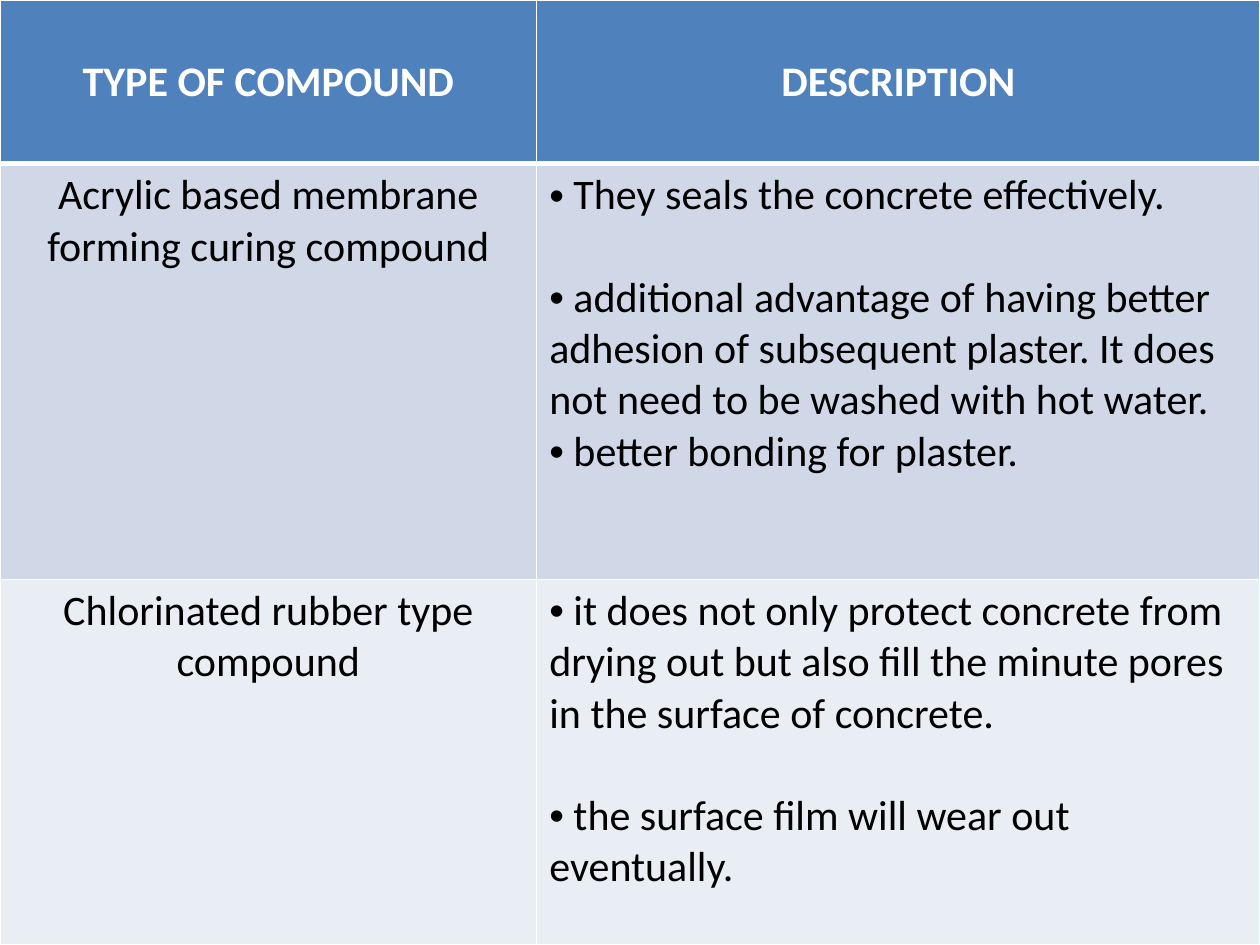
from dataclasses import dataclass

from lxml.etree import SubElement
from pptx import Presentation
from pptx.dml.color import RGBColor
from pptx.enum.text import MSO_ANCHOR, PP_ALIGN
from pptx.oxml.ns import qn
from pptx.util import Cm, Pt


@dataclass(frozen=True)
class Theme:
    font: str = "Calibri"
    size: int = 24
    gap: float = 29.3  # one text line, in points
    ink: str = "000000"
    white: str = "FFFFFF"
    head: str = "4F81BD"
    bands: tuple = ("D0D8E8", "E9EDF4")
    thin: int = 1
    thick: int = 3


THEME = Theme()
WIDTHS = (10.82, 14.58)
HEIGHTS = (3.3, 8.38, 7.37)
HEADS = ("TYPE OF COMPOUND", "DESCRIPTION")
# Each row: the compound, then its points as (text, gap above)
ROWS = (
    ("Acrylic based membrane forming curing compound", (
        ("They seals the concrete effectively.", False),
        ("additional advantage of having better adhesion of subsequent "
         "plaster. It does not need to be washed with hot water.", True),
        ("better bonding for plaster.", False),
    )),
    ("Chlorinated rubber type compound", (
        ("it does not only protect concrete from drying out but also fill "
         "the minute pores in the surface of concrete.", False),
        ("the surface film will wear out eventually.", True),
    )),
)


def add_bullet(para):
    props = para._p.get_or_add_pPr()
    props.set("marL", "0")
    props.set("indent", "0")
    SubElement(props, qn("a:buFont"), typeface="Arial")
    SubElement(props, qn("a:buChar"), char="•")


def write(para, text, color=THEME.ink, bold=False, align=PP_ALIGN.CENTER,
          bullet=False, gap=False):
    para.alignment = align
    if gap:
        para.space_before = Pt(THEME.gap)
    if bullet:
        add_bullet(para)
        text = " " + text  # the bullet has no hanging indent
    run = para.add_run()
    run.text = text
    font = run.font
    font.name, font.size, font.bold = THEME.font, Pt(THEME.size), bold
    font.color.rgb = RGBColor.from_string(color)


def style(cell, fill, top=THEME.thin, base=THEME.thin):
    # Borders come before the fill in the cell properties
    props = cell._tc.get_or_add_tcPr()
    for side, width in (("L", THEME.thin), ("R", THEME.thin),
                        ("T", top), ("B", base)):
        line = SubElement(props, qn(f"a:ln{side}"), w=str(Pt(width)))
        paint = SubElement(line, qn("a:solidFill"))
        SubElement(paint, qn("a:srgbClr"), val=THEME.white)
    cell.fill.solid()
    cell.fill.fore_color.rgb = RGBColor.from_string(fill)


def fill_head(table):
    for col, text in enumerate(HEADS):
        cell = table.cell(0, col)
        style(cell, THEME.head, base=THEME.thick)
        cell.vertical_anchor = MSO_ANCHOR.MIDDLE
        write(cell.text_frame.paragraphs[0], text,
              color=THEME.white, bold=True)


def fill_body(table):
    for row, (name, points) in enumerate(ROWS, 1):
        left, right = table.cell(row, 0), table.cell(row, 1)
        for cell in (left, right):
            style(cell, THEME.bands[row - 1],
                  top=THEME.thick if row == 1 else THEME.thin)
        write(left.text_frame.paragraphs[0], name)
        frame = right.text_frame
        for num, (text, gap) in enumerate(points):
            para = frame.add_paragraph() if num else frame.paragraphs[0]
            write(para, text, align=PP_ALIGN.LEFT, bullet=True, gap=gap)


def add_grid(slide):
    table = slide.shapes.add_table(
        len(HEIGHTS), len(WIDTHS), Cm(0), Cm(0),
        Cm(sum(WIDTHS)), Cm(sum(HEIGHTS))).table
    table.horz_banding = False
    for col, width in zip(table.columns, WIDTHS):
        col.width = Cm(width)
    for row, height in zip(table.rows, HEIGHTS):
        row.height = Cm(height)
    return table


def main():
    deck = Presentation()
    deck.slide_width, deck.slide_height = Cm(25.4), Cm(19.05)
    slide = deck.slides.add_slide(deck.slide_layouts[6])

    # Table of curing compounds
    table = add_grid(slide)
    fill_head(table)
    fill_body(table)

    deck.save("out.pptx")


if __name__ == "__main__":
    main()
